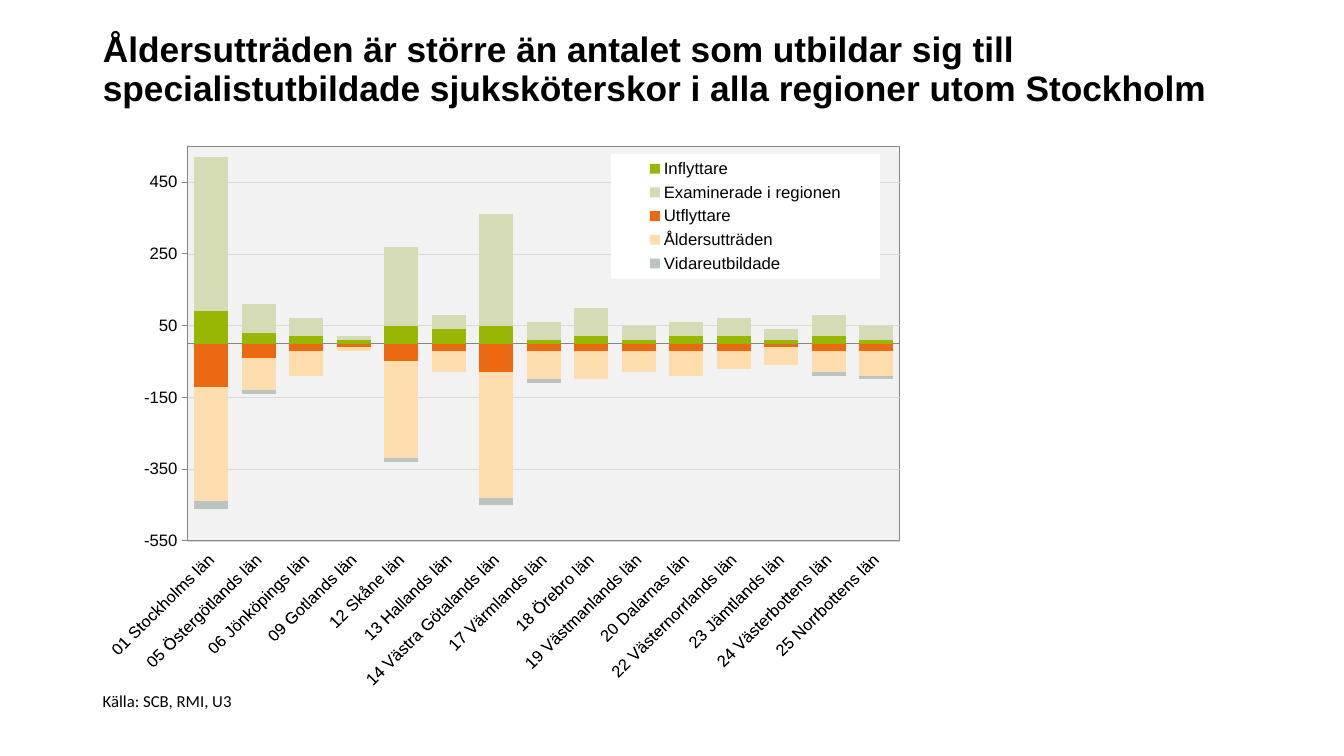
from pptx import Presentation
from pptx.chart.data import CategoryChartData
from pptx.dml.color import RGBColor
from pptx.enum import chart as charts, text
from pptx.oxml import parse_xml
from pptx.oxml.ns import nsdecls, qn
from pptx.util import Inches, Pt


def color(hex_value):
    return RGBColor.from_string(hex_value)


def layout_xml(x, y, w, h, inner=False):
    target = '<c:layoutTarget val="inner"/>' if inner else ""
    modes = "".join(f'<c:{side}Mode val="edge"/>' for side in "xy")
    sizes = "".join(f'<c:{key} val="{value}"/>' for key, value in zip("xywh", (x, y, w, h)))
    return parse_xml(f'<c:layout {nsdecls("c")}><c:manualLayout>{target}{modes}{sizes}</c:manualLayout></c:layout>')


presentation = Presentation()
presentation.slide_width = Inches(13.33)
presentation.slide_height = Inches(7.5)
slide = presentation.slides.add_slide(presentation.slide_layouts[5])

title = slide.shapes.title
source = slide.shapes.add_textbox(Inches(0.92), Inches(6.8), Inches(1.5), Inches(0.3))
text_formats = [
    (title, "Åldersutträden är större än antalet som utbildar sig till specialistutbildade "
     "sjuksköterskor i alla regioner utom Stockholm",
     {"left": Inches(0.92), "top": Inches(0.4), "width": Inches(11.5), "height": Inches(0.6)},
     {"word_wrap": True, "auto_size": text.MSO_AUTO_SIZE.NONE, "vertical_anchor": text.MSO_ANCHOR.MIDDLE},
     {"alignment": text.PP_ALIGN.LEFT, "line_spacing": 0.9},
     {"name": "Arial", "size": Pt(25.2), "bold": True}),
    (source, "Källa: SCB, RMI, U3", {},
     {"word_wrap": False, "auto_size": text.MSO_AUTO_SIZE.SHAPE_TO_FIT_TEXT},
     {"alignment": text.PP_ALIGN.LEFT}, {"name": "Calibri", "size": Pt(12)}),
]
for shape, wording, place, frame_format, paragraph_format, font_format in text_formats:
    frame = shape.text_frame
    frame.text = wording
    paragraph = frame.paragraphs[0]
    font = paragraph.runs[0].font
    font.color.rgb = color("000000")
    for item, values in ((shape, place), (frame, frame_format), (paragraph, paragraph_format), (font, font_format)):
        for key, value in values.items():
            setattr(item, key, value)

series_values = {
    "Inflyttare": ("98B604", [90, 30, 20, 10, 50, 40, 50, 10, 20, 10, 20, 20, 10, 20, 10]),
    "Examinerade i regionen": ("D4DBB5", [430, 80, 50, 10, 220, 40, 310, 50, 80, 40, 40, 50, 30, 60, 40]),
    "Utflyttare": ("EB6913", [-120, -40, -20, -10, -50, -20, -80, -20, -20, -20, -20, -20, -10, -20, -20]),
    "Åldersutträden": ("FDDDAD", [-320, -90, -70, -10, -270, -60, -350, -80, -80, -60, -70, -50, -50, -60, -70]),
    "Vidareutbildade": ("BDC3BF", [-20, -10, 0, 0, -10, 0, -20, -10, 0, 0, 0, 0, 0, -10, -10]),
}
chart_data = CategoryChartData()
chart_data.categories = [
    "01 Stockholms län", "05 Östergötlands län", "06 Jönköpings län", "09 Gotlands län",
    "12 Skåne län", "13 Hallands län", "14 Västra Götalands län", "17 Värmlands län",
    "18 Örebro län", "19 Västmanlands län", "20 Dalarnas län", "22 Västernorrlands län",
    "23 Jämtlands län", "24 Västerbottens län", "25 Norrbottens län",
]
for name, (fill, values) in series_values.items():
    chart_data.add_series(name, values)
chart = slide.shapes.add_chart(
    charts.XL_CHART_TYPE.COLUMN_STACKED, Inches(1.07), Inches(1.36), Inches(7.86), Inches(5.47), chart_data).chart
chart.has_title = False
chart.font.name = "Arial"
chart.font.size = Pt(8)
chart.font.color.rgb = color("000000")

plot = chart.plots[0]
plot.gap_width = 40
plot.overlap = 100
plot.vary_by_categories = False
for series in plot.series:
    series.invert_if_negative = False
    series.format.fill.solid()
    series.format.fill.fore_color.rgb = color(series_values[series.name][0])

chart.has_legend = True
legend = chart.legend
category_axis, value_axis = chart.category_axis, chart.value_axis
formats = [
    (category_axis, {"tick_label_position": charts.XL_TICK_LABEL_POSITION.LOW,
                     "major_tick_mark": charts.XL_TICK_MARK.NONE, "has_major_gridlines": False}),
    (value_axis, {"minimum_scale": -550, "maximum_scale": 550, "major_unit": 200,
                  "major_tick_mark": charts.XL_TICK_MARK.OUTSIDE, "has_major_gridlines": True}),
    (legend, {"position": charts.XL_LEGEND_POSITION.TOP, "include_in_layout": True}),
]
for item, values in formats:
    for key, value in values.items():
        setattr(item, key, value)
for font in (category_axis.tick_labels.font, value_axis.tick_labels.font, legend.font):
    font.size = Pt(12)
    font.name = "Arial"
    font.color.rgb = color("000000")
for line, line_color, width in (
        (category_axis.format.line, "868686", 0.75),
        (value_axis.format.line, "868686", 0.75),
        (value_axis.major_gridlines.format.line, "D9D9D9", 0.5)):
    line.color.rgb = color(line_color)
    line.width = Pt(width)

chart_space = chart._chartSpace
body = chart_space.find(f".//{qn('c:catAx')}/{qn('c:txPr')}/{qn('a:bodyPr')}")
body.set("rot", "-2700000")
body.set("vert", "horz")

plot_area = chart_space.find(f".//{qn('c:plotArea')}")
legend_element = chart_space.find(f".//{qn('c:legend')}")
for parent in (plot_area, legend_element):
    for layout in parent.findall(qn("c:layout")):
        parent.remove(layout)
plot_area.insert(0, layout_xml(0.1, 0.017, 0.9, 0.728, inner=True))
overlay = legend_element.find(qn("c:overlay"))
overlay.addprevious(layout_xml(0.635, 0.031, 0.34, 0.23))

area_fill = '<c:spPr {}><a:solidFill><a:srgbClr val="{}"/></a:solidFill>{}</c:spPr>'
border = '<a:ln w="9525"><a:solidFill><a:srgbClr val="868686"/></a:solidFill></a:ln>'
plot_area.append(parse_xml(area_fill.format(nsdecls("c", "a"), "F2F2F2", border)))
overlay.addnext(parse_xml(area_fill.format(nsdecls("c", "a"), "FFFFFF", "")))

presentation.save("out.pptx")
